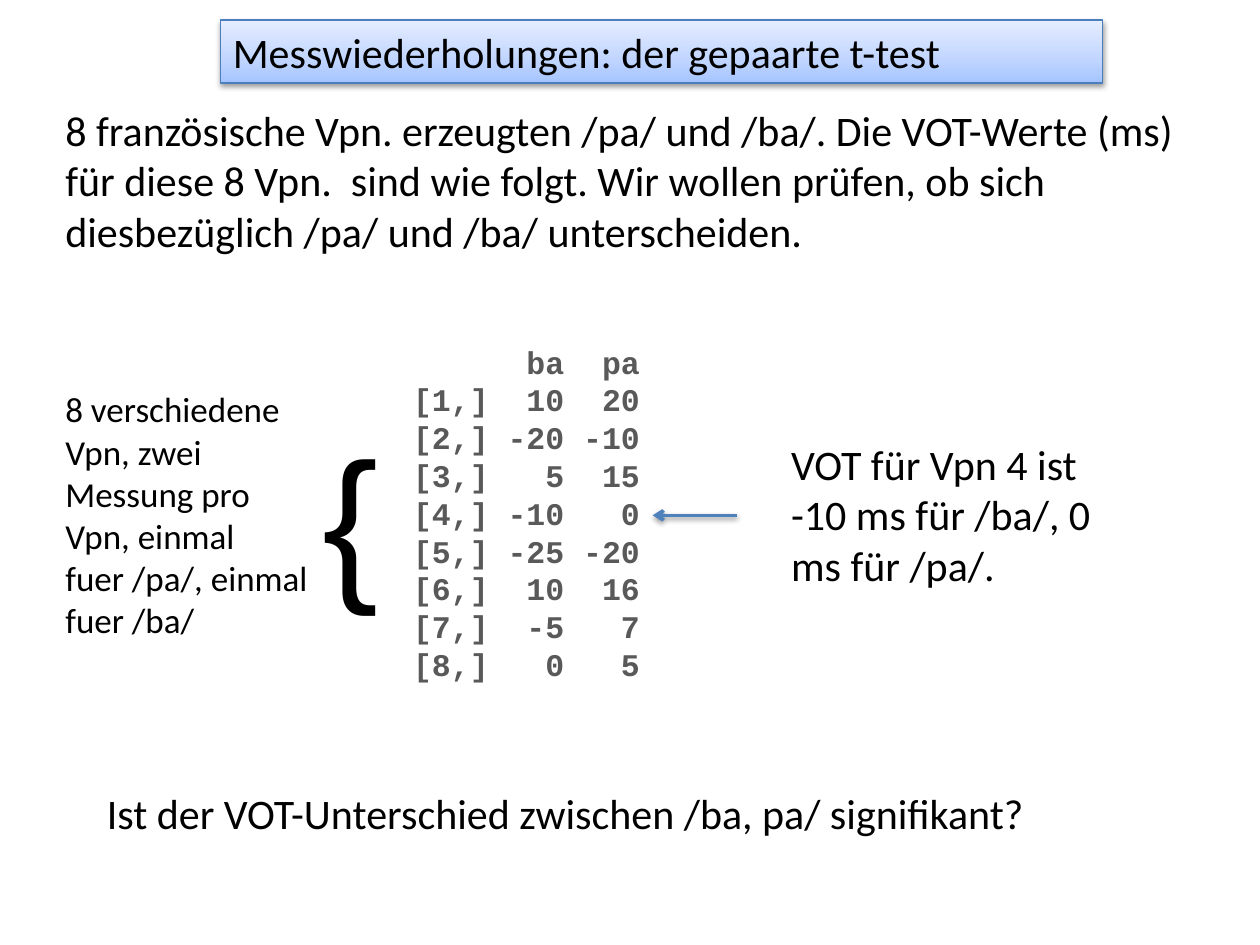
from dataclasses import dataclass

import lxml.etree
import pptx
import pptx.dml.color
import pptx.enum.shapes
import pptx.enum.text
import pptx.oxml.ns
import pptx.util

Inches = pptx.util.Inches
Pt = pptx.util.Pt
qn = pptx.oxml.ns.qn


@dataclass(frozen=True)
class Passage:
    left: float
    top: float
    width: float
    height: float
    lines: tuple[str, ...]
    size: float = 24
    font: str = "Calibri"
    color: str = "000000"
    bold: bool = False
    wrap: bool = True
    pitch: float | None = None


@dataclass(frozen=True)
class Measurement:
    ba: int
    pa: int


MEASUREMENTS = (
    Measurement(10, 20),
    Measurement(-20, -10),
    Measurement(5, 15),
    Measurement(-10, 0),
    Measurement(-25, -20),
    Measurement(10, 16),
    Measurement(-5, 7),
    Measurement(0, 5),
)
MATRIX_LINES = (f"{'':4}{'ba':>4}{'pa':>4}",) + tuple(
    f"[{number},]{row.ba:>4}{row.pa:>4}" for number, row in enumerate(MEASUREMENTS, 1)
)

TITLE = Passage(1.75, 0.16, 7, 0.5, ("Messwiederholungen: der gepaarte t-test",))
TITLE_STOPS = ((0, "A4C4FF"), (35, "BFD4FF"), (100, "E6EEFF"))
PASSAGES = (
    Passage(0.42, 0.78, 9, 1.31, (
        "8 französische Vpn. erzeugten /pa/ und /ba/. Die VOT-Werte (ms) "
        "für diese 8 Vpn.  sind wie folgt. Wir wollen prüfen, ob sich "
        "diesbezüglich /pa/ und /ba/ unterscheiden.",)),
    Passage(6.18, 3.43, 2.98, 1.31,
            ("VOT für Vpn 4 ist -10 ms für /ba/, 0 ms für /pa/.",)),
    Passage(3.18, 2.67, 2.25, 2.83, MATRIX_LINES, 18, "Courier New", "595959",
            bold=True, pitch=21.6),
    Passage(0.75, 6.2, 8.42, 0.5,
            ("Ist der VOT-Unterschied zwischen /ba, pa/ signifikant?",)),
    Passage(2.46, 3.23, 0.65, 1.72, ("{",), 96, "Arial", wrap=False),
    Passage(0.42, 3.03, 2.21, 2.12, (
        "8 verschiedene Vpn, zwei Messung pro Vpn, einmal "
        "fuer /pa/, einmal fuer /ba/",), 20),
)


def rgb(color: str) -> pptx.dml.color.RGBColor:
    return pptx.dml.color.RGBColor.from_string(color)


def box(passage: Passage) -> tuple:
    return tuple(Inches(length) for length in
                 (passage.left, passage.top, passage.width, passage.height))


def write(frame, passage: Passage) -> None:
    frame.word_wrap = passage.wrap
    frame.vertical_anchor = pptx.enum.text.MSO_ANCHOR.TOP
    for index, line in enumerate(passage.lines):
        paragraph = frame.add_paragraph() if index else frame.paragraphs[0]
        paragraph.alignment = pptx.enum.text.PP_ALIGN.LEFT
        if passage.pitch:
            paragraph.line_spacing = Pt(passage.pitch)
        run = paragraph.add_run()
        run.text = line
        run.font.size = Pt(passage.size)
        run.font.name = passage.font
        run.font.bold = passage.bold
        run.font.color.rgb = rgb(passage.color)


def add_shadow(properties) -> None:
    for effects in properties.findall(qn("a:effectLst")):
        properties.remove(effects)
    effects = lxml.etree.SubElement(properties, qn("a:effectLst"))
    shadow = lxml.etree.SubElement(
        effects, qn("a:outerShdw"), blurRad=str(Pt(3.1)), dist=str(Pt(1.6)),
        dir="5400000", rotWithShape="0")
    tint = lxml.etree.SubElement(shadow, qn("a:srgbClr"), val="000000")
    lxml.etree.SubElement(tint, qn("a:alpha"), val="38000")


def add_title(slide) -> None:
    banner = slide.shapes.add_shape(
        pptx.enum.shapes.MSO_SHAPE.RECTANGLE, *box(TITLE))
    banner.fill.gradient()
    banner.fill.gradient_angle = 90
    properties = banner._element.spPr
    stops = properties.find(qn("a:gradFill")).find(qn("a:gsLst"))
    for stop in list(stops):
        stops.remove(stop)
    for percent, color in TITLE_STOPS:
        stop = lxml.etree.SubElement(stops, qn("a:gs"), pos=str(percent * 1000))
        lxml.etree.SubElement(stop, qn("a:srgbClr"), val=color)
    banner.line.color.rgb = rgb("4B7EBC")
    banner.line.width = Pt(0.75)
    add_shadow(properties)
    write(banner.text_frame, TITLE)


def add_pointer(slide) -> None:
    pointer = slide.shapes.add_connector(
        pptx.enum.shapes.MSO_CONNECTOR.STRAIGHT,
        Inches(5.85), Inches(4.09), Inches(5.18), Inches(4.09))
    pointer.line.color.rgb = rgb("4F81BD")
    pointer.line.width = Pt(2)
    lxml.etree.SubElement(pointer.line._get_or_add_ln(), qn("a:tailEnd"), type="arrow")
    add_shadow(pointer._element.spPr)


def main() -> None:
    presentation = pptx.Presentation()
    presentation.slide_width = Inches(10)
    presentation.slide_height = Inches(7.5)
    slide = presentation.slides.add_slide(presentation.slide_layouts[6])
    add_title(slide)
    for passage in PASSAGES:
        write(slide.shapes.add_textbox(*box(passage)).text_frame, passage)
    add_pointer(slide)
    presentation.save("out.pptx")


if __name__ == "__main__":
    main()
